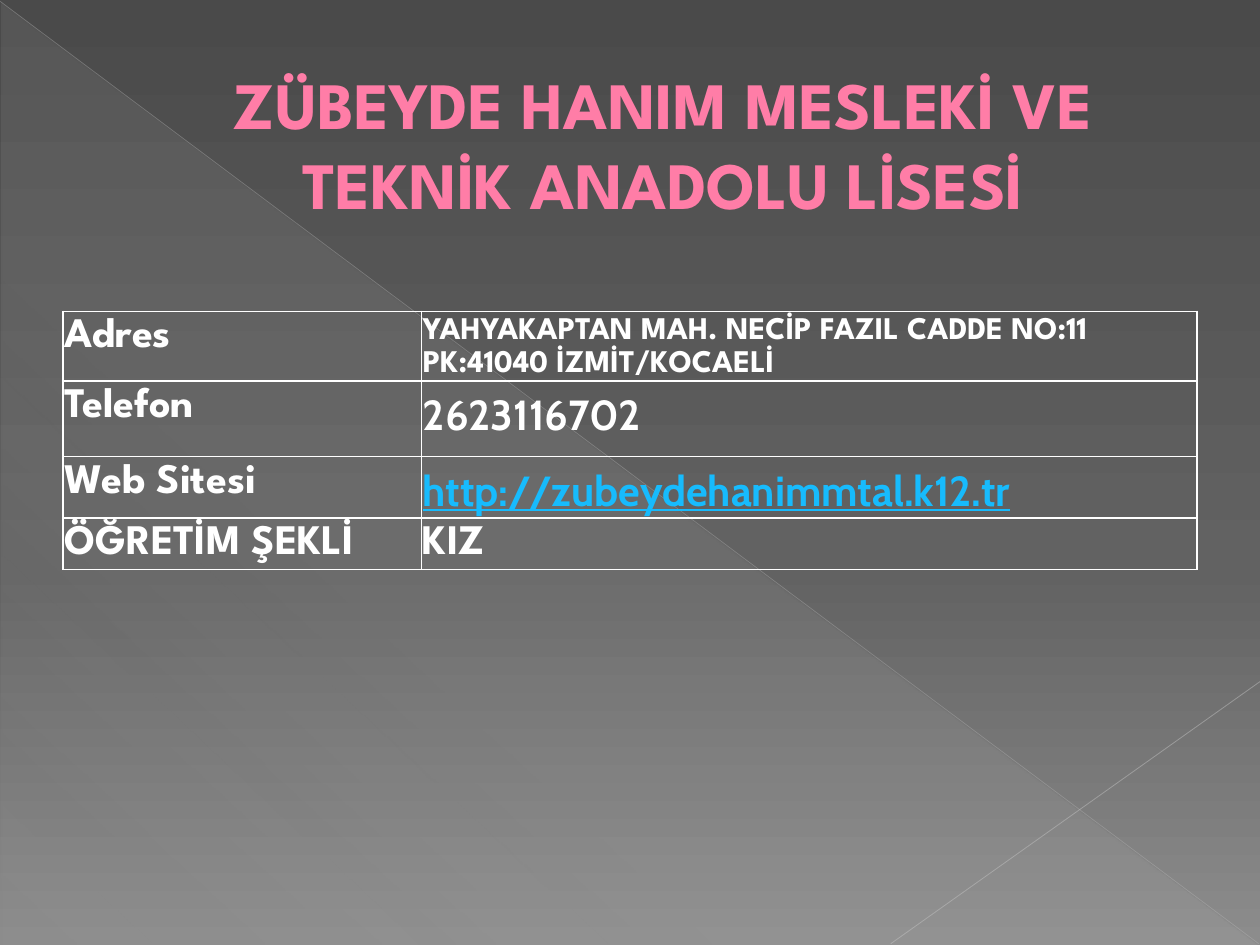
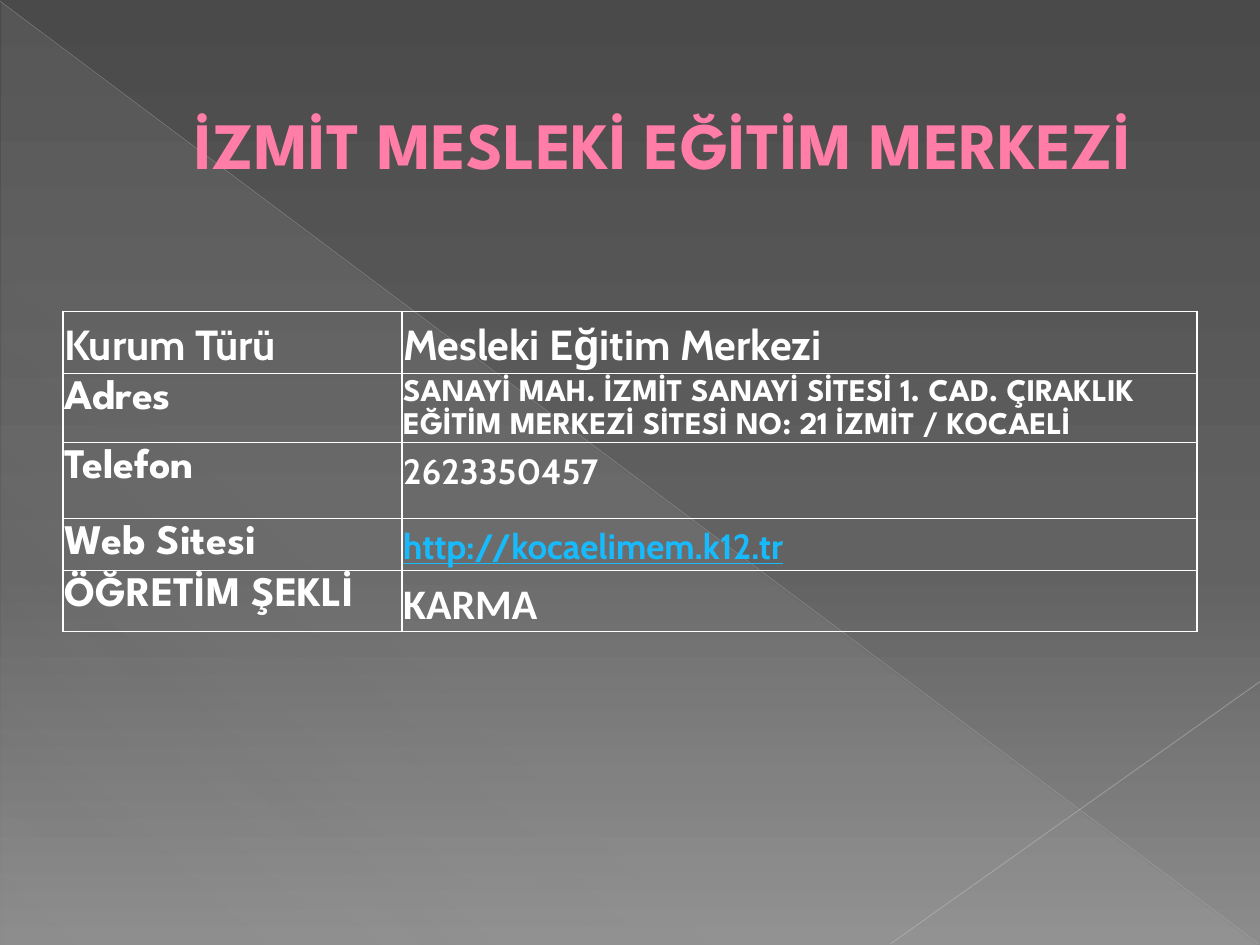
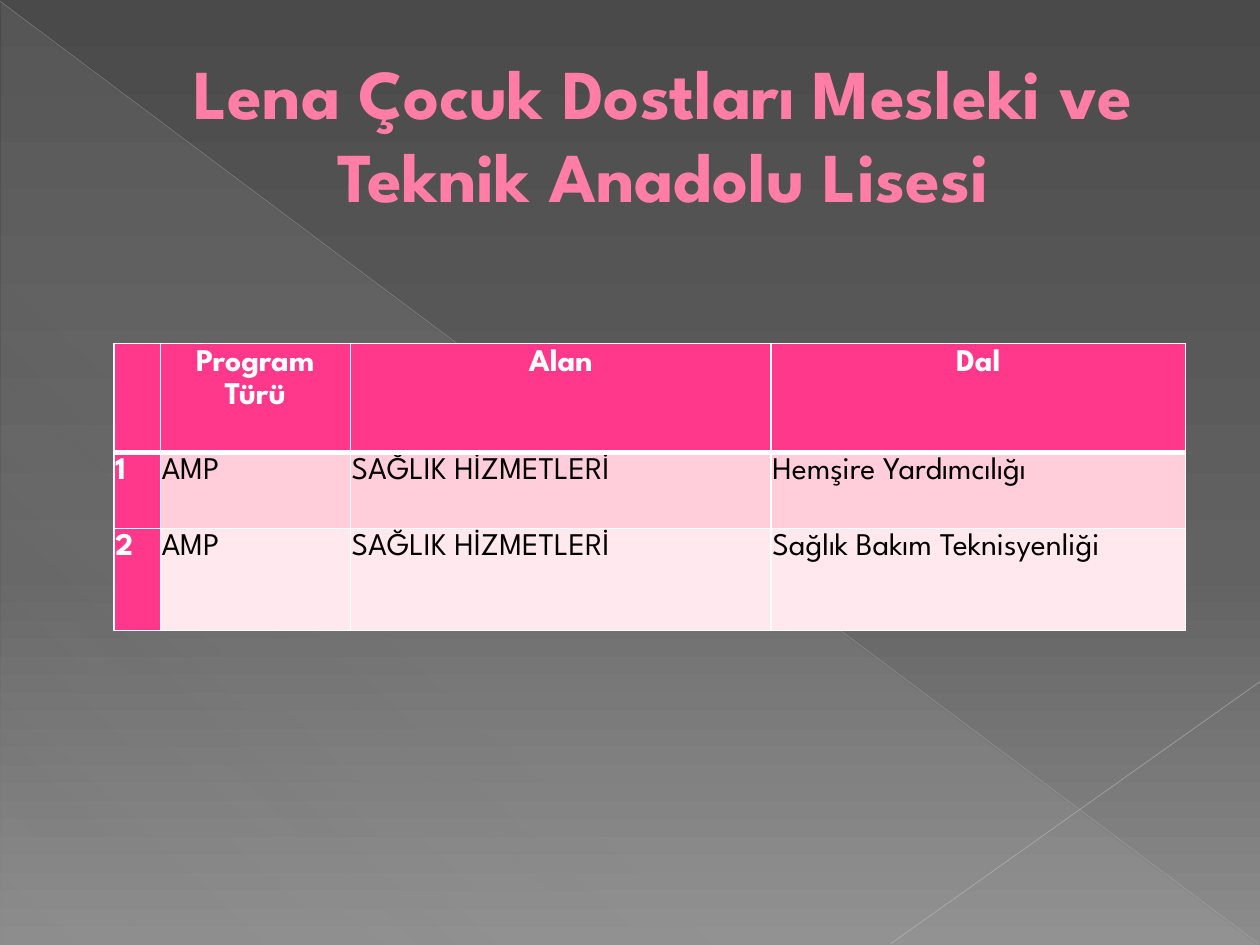
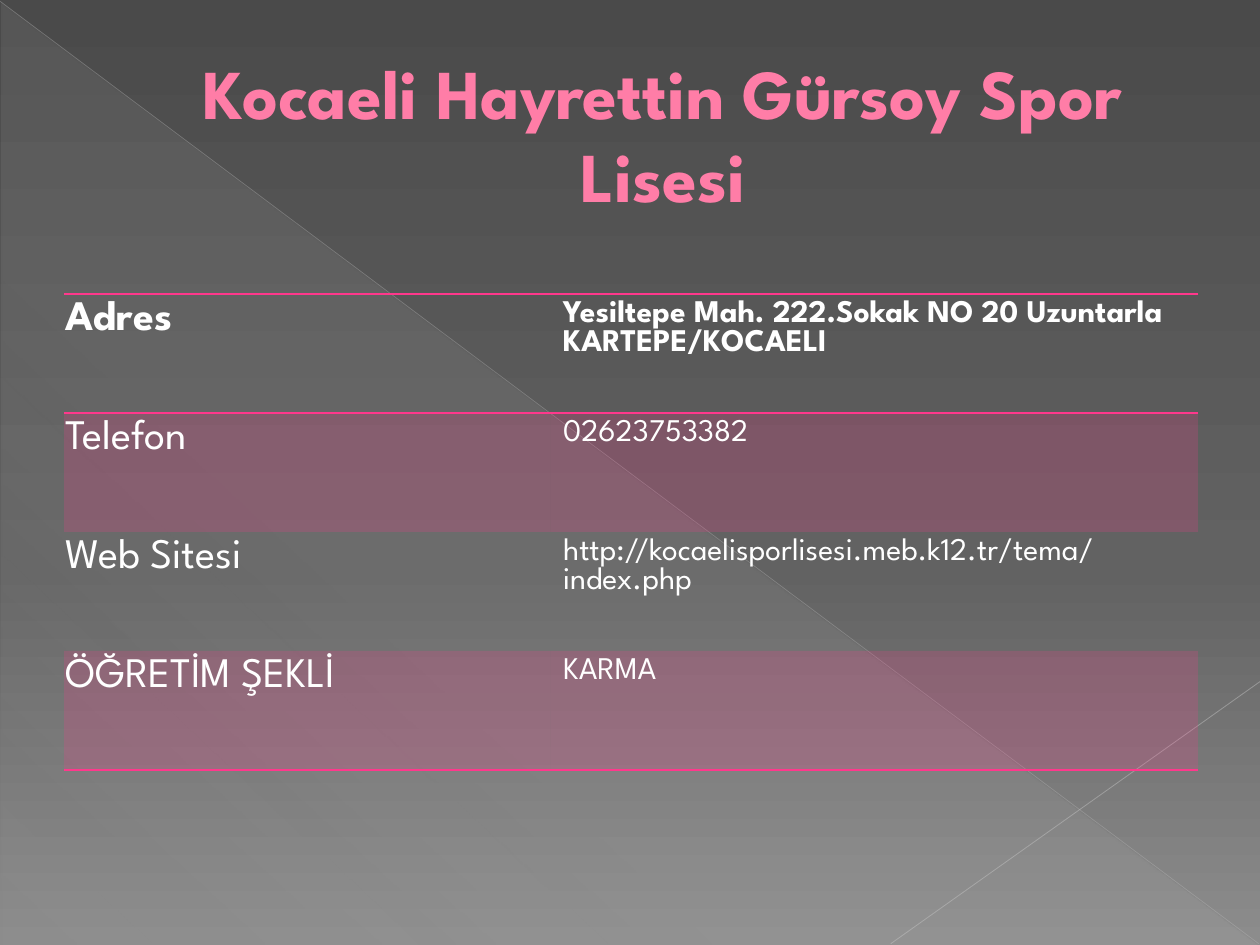
from dataclasses import dataclass, replace
from typing import Optional

from lxml import etree
from pptx import Presentation
from pptx.dml.color import RGBColor
from pptx.enum import shapes, text
from pptx.oxml import ns
from pptx.util import Pt


@dataclass(frozen=True)
class Theme:
    heading_font: str = "League Spartan"
    data_font: str = "Cabin"
    plain_font: str = "Calibri"
    white: str = "FFFFFF"
    black: str = "000000"
    title: str = "FF7DA7"
    title_edge: str = "B12761"
    link: str = "17BBFD"
    accent: str = "FF388C"
    tint: str = "FFCEDA"
    pale_tint: str = "FFE8EE"
    veil: str = "D2D2D2"
    diagonal: str = "BFBFBF"
    corner: str = "C6C6C6"
    backdrop: tuple = ((0, "4A4A4A", 100), (60, "626262", 100), (100, "8C8C8C", 100))
    label_size: float = 24
    detail_size: float = 20
    text_size: float = 18
    title_size: float = 40
    long_title_size: float = 37.8


THEME = Theme()
NO_STYLE = "{2D5ABB26-0587-4C30-8999-92F81FD0307C}"
TIGHT, CENTERED_X, INSET_X, INSET_Y = 0.72, 4, 7.2, 3.6


@dataclass(frozen=True)
class Entry:
    text: str
    size: float = THEME.label_size
    font: str = THEME.heading_font
    color: str = THEME.white
    bold: bool = True
    underline: bool = False
    fill: Optional[str] = None
    alpha: int = 100
    centered: bool = False
    roomy: bool = False


@dataclass(frozen=True)
class Grid:
    left: float
    top: float
    columns: tuple
    rows: tuple
    entries: list
    rules: tuple
    rule_color: str = THEME.white
    verticals: bool = True
    space_after: float = 10


@dataclass(frozen=True)
class Heading:
    text: str
    size: float = THEME.title_size
    top: float = 21
    height: float = 110
    bottom_inset: float = INSET_Y


def rgb(color: str) -> RGBColor:
    return RGBColor.from_string(color)


def add_node(parent, tag: str, **attributes):
    node = etree.SubElement(parent, ns.qn(tag))
    for key, value in attributes.items():
        node.set(key, str(value))
    return node


def add_color(parent, color: str, alpha: int = 100) -> None:
    node = add_node(parent, "a:srgbClr", val=color)
    if alpha < 100:
        add_node(node, "a:alpha", val=alpha * 1000)


def line_node(tag: str, color: str, width: float):
    line = etree.Element(ns.qn(tag), w=str(int(Pt(width))))
    add_color(add_node(line, "a:solidFill"), color)
    return line


def set_gradient(fill, owner, stops: tuple, angle: int) -> None:
    fill.gradient()
    gradient = owner.find(".//" + ns.qn("a:gradFill"))
    stop_list = gradient.find(ns.qn("a:gsLst"))
    for stop in list(stop_list):
        stop_list.remove(stop)
    for position, color, alpha in stops:
        add_color(add_node(stop_list, "a:gs", pos=position * 1000), color, alpha)
    gradient.find(ns.qn("a:lin")).set("ang", str(angle * 60000))


def draw_line(slide, start: tuple, end: tuple, color: str, width: float, alpha: int):
    line = slide.shapes.add_connector(
        shapes.MSO_CONNECTOR.STRAIGHT, *(Pt(value) for value in start + end))
    line.line.color.rgb = rgb(color)
    line.line.width = Pt(width)
    properties = line.element.spPr
    solid = properties.find(".//" + ns.qn("a:srgbClr"))
    add_node(solid, "a:alpha", val=alpha * 1000)
    add_node(properties, "a:effectLst")
    return line


def decorate_layout(layout, slide) -> None:
    set_gradient(layout.background.fill, layout.element, THEME.backdrop, 90)
    veil = slide.shapes.add_shape(
        shapes.MSO_SHAPE.RIGHT_TRIANGLE, Pt(0.72), Pt(1.44), Pt(718.56), Pt(538.56))
    veil.shadow.inherit = False
    veil.line.fill.background()
    stops = tuple((position, THEME.veil, alpha)
                  for position, alpha in ((0, 10), (70, 8), (100, 1)))
    set_gradient(veil.fill, veil.element, stops, 133)
    diagonal = draw_line(slide, (0, 0.72), (719.28, 539.28), THEME.diagonal, 0.39, 35)
    corner = draw_line(slide, (720, 389.5), (509, 539.28), THEME.corner, 0.47, 45)
    for index, ornament in enumerate((veil, diagonal, corner), start=2):
        layout.shapes.element.insert(index, ornament.element)


def style_run(run, size: float, font: str, color: str, bold: bool) -> None:
    run.font.size = Pt(size)
    run.font.name = font
    run.font.bold = bold
    run.font.color.rgb = rgb(color)


def draw_heading(slide, heading: Heading) -> None:
    title = slide.shapes.title
    title.left, title.top = Pt(36), Pt(heading.top)
    title.width, title.height = Pt(648), Pt(heading.height)
    frame = title.text_frame
    frame.text = heading.text
    frame.word_wrap = True
    frame.auto_size = text.MSO_AUTO_SIZE.NONE
    frame.vertical_anchor = text.MSO_ANCHOR.MIDDLE
    frame.margin_bottom = Pt(heading.bottom_inset)
    paragraph = frame.paragraphs[0]
    paragraph.alignment = text.PP_ALIGN.CENTER
    indents = paragraph._p.get_or_add_pPr()
    indents.set("marL", str(int(Pt(38))))
    indents.set("indent", "0")
    run = paragraph.runs[0]
    style_run(run, heading.size, THEME.heading_font, THEME.title, True)
    run.font._element.insert(0, line_node("a:ln", THEME.title_edge, 0.5))


def fill_cell(cell, entry: Entry, space_after: float) -> None:
    inset_x, inset_y = (INSET_X, INSET_Y) if entry.roomy else (TIGHT, TIGHT)
    if entry.centered:
        inset_x = CENTERED_X
    cell.margin_left = cell.margin_right = Pt(inset_x)
    cell.margin_top = cell.margin_bottom = Pt(inset_y)
    if entry.fill:
        cell.fill.solid()
        cell.fill.fore_color.rgb = rgb(entry.fill)
        if entry.alpha < 100:
            color = cell._tc.tcPr.find(".//" + ns.qn("a:srgbClr"))
            add_node(color, "a:alpha", val=entry.alpha * 1000)
    else:
        cell.fill.background()
    if not entry.text:
        return
    cell.text_frame.text = entry.text
    paragraph = cell.text_frame.paragraphs[0]
    if entry.centered:
        paragraph.alignment = text.PP_ALIGN.CENTER
    if not entry.roomy:
        paragraph.line_spacing = 1.15
        paragraph.space_after = Pt(space_after)
    run = paragraph.runs[0]
    style_run(run, entry.size, entry.font, entry.color, entry.bold)
    run.font.underline = entry.underline


def rule_cell(cell, grid: Grid, row: int) -> None:
    side = 1 if grid.verticals else 0
    widths = {"a:lnL": side, "a:lnR": side,
              "a:lnT": grid.rules[0] if row == 0 else 0, "a:lnB": grid.rules[row + 1]}
    drawn = [(tag, width) for tag, width in widths.items() if width]
    for index, (tag, width) in enumerate(drawn):
        cell._tc.tcPr.insert(index, line_node(tag, grid.rule_color, width))


def draw_grid(slide, grid: Grid) -> None:
    frame = slide.shapes.add_table(
        len(grid.rows), len(grid.columns), Pt(grid.left), Pt(grid.top),
        Pt(sum(grid.columns)), Pt(sum(grid.rows)))
    table = frame.table
    table.first_row = table.horz_banding = False
    table._tbl.tblPr.find(ns.qn("a:tableStyleId")).text = NO_STYLE
    for column, width in zip(table.columns, grid.columns):
        column.width = Pt(width)
    for row, height in zip(table.rows, grid.rows):
        row.height = Pt(height)
    last = len(grid.rows) - 1
    for row, entries in enumerate(grid.entries):
        for column, entry in enumerate(entries):
            cell = table.cell(row, column)
            fill_cell(cell, entry, grid.space_after if row < last else 0)
            rule_cell(cell, grid, row)


def data(value: str, size: float = THEME.label_size) -> Entry:
    return Entry(value, size, THEME.data_font)


def web(address: str, size: float = THEME.label_size) -> Entry:
    return replace(data(address, size), color=THEME.link, underline=True)


def school_card(columns: tuple, rows: tuple, entries: list) -> Grid:
    return Grid(36, 178, columns, rows, entries, (1,) * (len(rows) + 1))


def program_grid() -> Grid:
    header = [Entry(name, THEME.text_size, fill=THEME.accent, centered=True)
              for name in ("", "Program Türü", "Alan", "Dal")]
    branches = (("Hemşire Yardımcılığı", THEME.tint),
                ("Sağlık Bakım Teknisyenliği", THEME.pale_tint))
    body = []
    for number, (branch, tint) in enumerate(branches, start=1):
        cells = [Entry(value, THEME.text_size, color=THEME.black, bold=False, fill=tint)
                 for value in ("AMP", "SAĞLIK HİZMETLERİ", branch)]
        body.append([Entry(str(number), THEME.text_size, fill=THEME.accent)] + cells)
    return Grid(65.2, 196.4, (26.4, 108.6, 240.5, 236.7), (62, 43.5, 58.5),
                [header] + body, (1, 3, 1, 1), space_after=0)


def sports_grid() -> Grid:
    facts = (("Adres", "Yesiltepe Mah. 222.Sokak NO 20 Uzuntarla KARTEPE/KOCAELI"),
             ("Telefon", "02623753382"),
             ("Web Sitesi", "http://kocaelisporlisesi.meb.k12.tr/tema/index.php"),
             ("ÖĞRETİM ŞEKLİ", "KARMA"))
    entries = []
    for row, (label, value) in enumerate(facts):
        name = Entry(label, bold=row == 0, fill=THEME.accent if row % 2 else None, alpha=20)
        entries.append([name, replace(name, text=value, size=THEME.text_size, roomy=True)])
    return Grid(36.6, 168, (278, 370), (68,) * 4, entries, (1, 1, 0, 0, 1),
                rule_color=THEME.accent, verticals=False)


def main() -> None:
    address, phone, site, mode = (
        Entry(label) for label in ("Adres", "Telefon", "Web Sitesi", "ÖĞRETİM ŞEKLİ"))
    long_title = Heading("", THEME.long_title_size, 77, 54, 48)
    pages = (
        (replace(long_title, text="ZÜBEYDE HANIM MESLEKİ VE TEKNİK ANADOLU LİSESİ"),
         school_card((205, 443), (39.6, 43.4, 34.8, 29.6), [
             [address, Entry("YAHYAKAPTAN MAH. NECİP FAZIL CADDE NO:11 "
                             "PK:41040 İZMİT/KOCAELİ", THEME.text_size)],
             [phone, data("2623116702")],
             [site, web("http://zubeydehanimmtal.k12.tr")],
             [mode, Entry("KIZ")]])),
        (replace(long_title, text="İZMİT MESLEKİ EĞİTİM MERKEZİ"),
         school_card((193.7, 454.3), (35.4, 39.4, 43.4, 29.6, 35), [
             [data("Kurum Türü"), data("Mesleki Eğitim Merkezi")],
             [address, Entry("SANAYİ MAH. İZMİT SANAYİ SİTESİ 1. CAD. ÇIRAKLIK EĞİTİM "
                             "MERKEZİ SİTESİ NO: 21 İZMİT / KOCAELİ", THEME.text_size)],
             [phone, data("2623350457", THEME.detail_size)],
             [site, web("http://kocaelimem.k12.tr", THEME.detail_size)],
             [mode, Entry("KARMA", font=THEME.plain_font)]])),
        (Heading("Lena Çocuk Dostları Mesleki ve Teknik Anadolu Lisesi"), program_grid()),
        (Heading("Kocaeli Hayrettin Gürsoy Spor Lisesi"), sports_grid()),
    )
    deck = Presentation()
    deck.slide_width, deck.slide_height = Pt(720), Pt(540)
    layout = deck.slide_layouts.get_by_name("Title Only")
    for number, (heading, grid) in enumerate(pages):
        slide = deck.slides.add_slide(layout)
        if number == 0:
            decorate_layout(layout, slide)
        draw_heading(slide, heading)
        draw_grid(slide, grid)
    deck.save("out.pptx")


if __name__ == "__main__":
    main()
